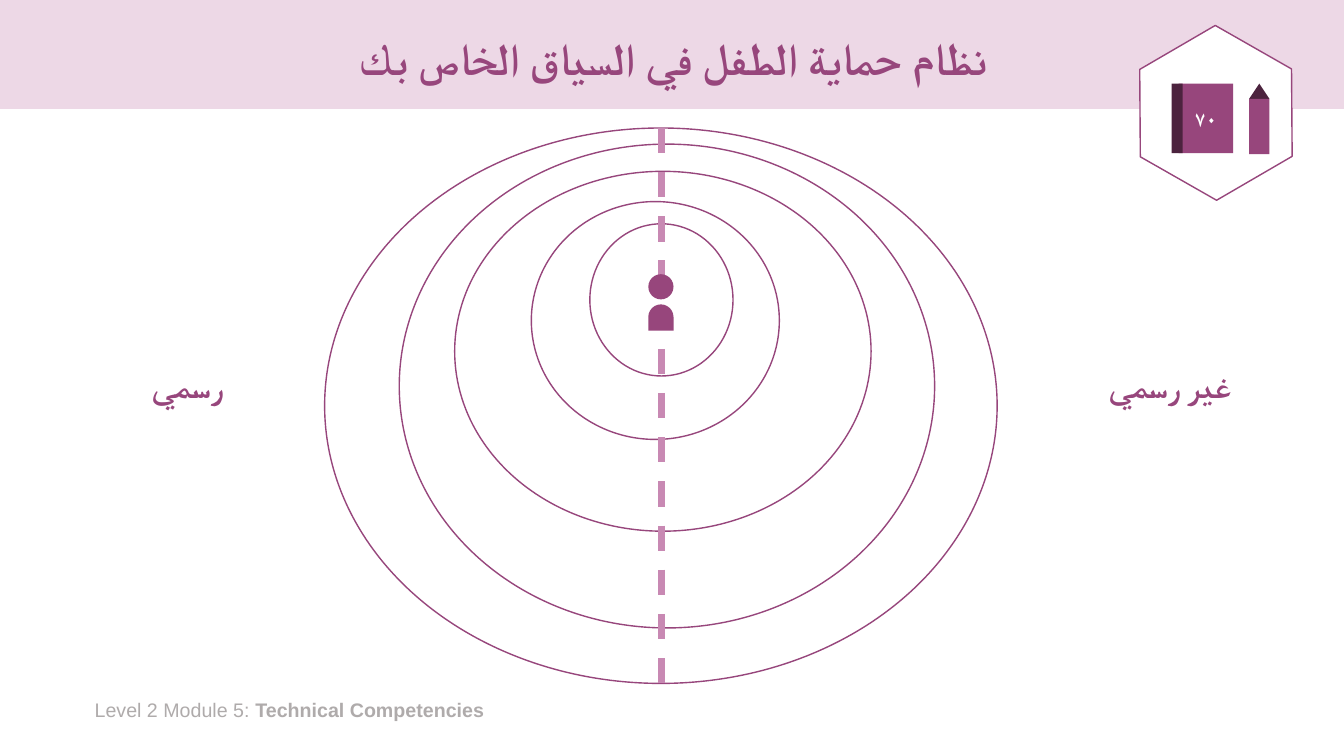
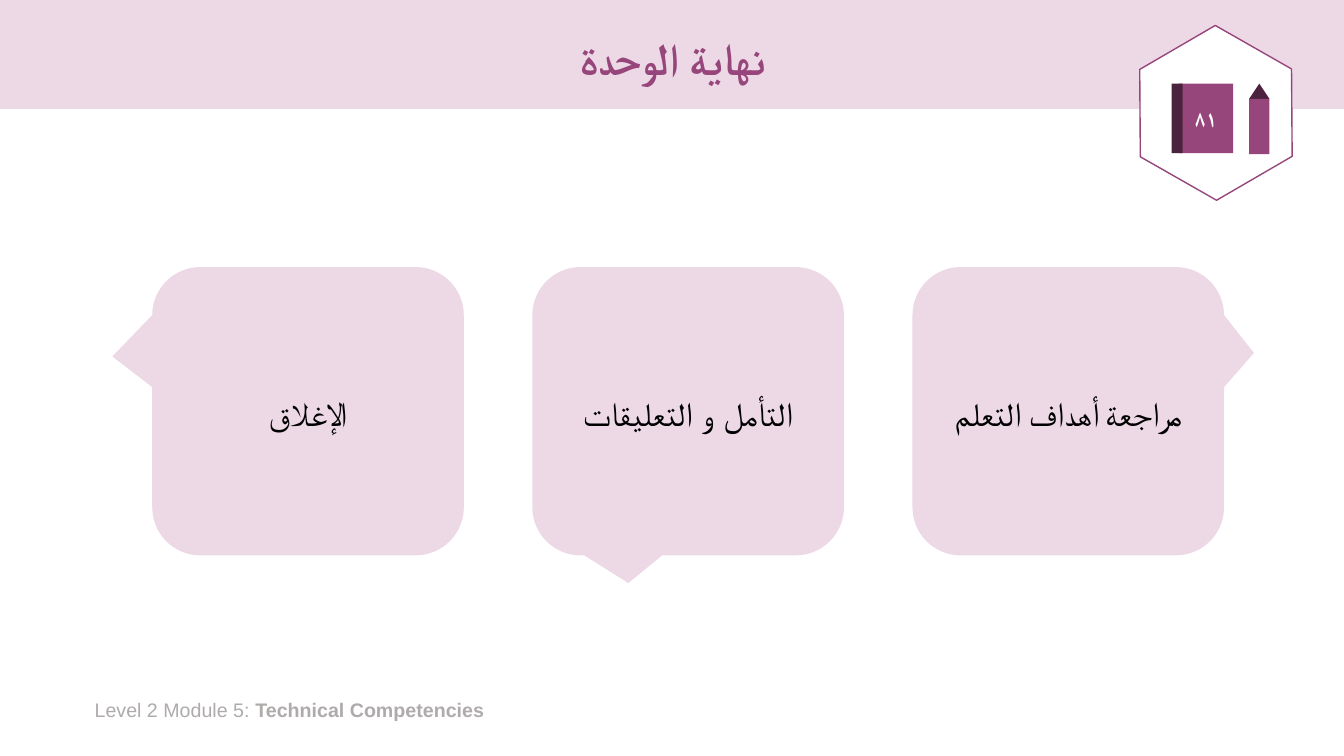
from lxml import etree
from pptx import Presentation
from pptx.dml.color import RGBColor
from pptx.enum.dml import MSO_LINE
from pptx.enum.shapes import MSO_CONNECTOR, MSO_SHAPE as SHAPE
from pptx.enum.text import MSO_ANCHOR, MSO_AUTO_SIZE, PP_ALIGN
from pptx.oxml.ns import qn
from pptx.util import Inches, Pt

COLORS = {
    "plum": "97467C",
    "dark": "4C233E",
    "pale": "EDD8E6",
    "dash": "C889B3",
    "gray": "AFABAB",
    "white": "FFFFFF",
    "black": "000000",
}
TITLE_BOX = (0.92, 0.13, 11.5, 0.95)
TITLE_ONLY = 5


def color(name):
    return RGBColor.from_string(COLORS[name])


def inches(*values):
    return [Inches(value) for value in values]


# Text
def add_run(paragraph, text, size, color_name, bold=False, font="Arial", script_font=None):
    run = paragraph.add_run()
    run.text = text
    run.font.size = Pt(size)
    run.font.bold = bold
    run.font.color.rgb = color(color_name)
    run.font.name = font
    # Arabic letters take the complex-script font
    properties = run.font._element
    etree.SubElement(properties, qn("a:cs")).set("typeface", script_font or font)


def write_arabic(shape, text, size, color_name, **style):
    shape.text_frame.vertical_anchor = MSO_ANCHOR.MIDDLE
    paragraph = shape.text_frame.paragraphs[0]
    paragraph.alignment = PP_ALIGN.CENTER
    paragraph._p.get_or_add_pPr().set("rtl", "1")
    add_run(paragraph, text, size, color_name, **style)
    return paragraph


def add_text_box(slide, box):
    text_box = slide.shapes.add_textbox(*inches(*box))
    text_box.text_frame.word_wrap = True
    return text_box


# Shapes
def add_shape(shapes, kind, box, fill=None, line=None, adjustments=()):
    shape = shapes.add_shape(kind, *inches(*box))
    shape.shadow.inherit = False
    for index, value in enumerate(adjustments):
        shape.adjustments[index] = value
    if fill:
        shape.fill.solid()
        shape.fill.fore_color.rgb = color(fill)
    else:
        shape.fill.background()
    if line:
        shape.line.color.rgb = color(line)
        shape.line.width = Pt(1)
    else:
        shape.line.fill.background()
    return shape


def add_dashed_line(slide, x, top, bottom):
    line = slide.shapes.add_connector(MSO_CONNECTOR.STRAIGHT, *inches(x, top, x, bottom))
    line.line.color.rgb = color("dash")
    line.line.width = Pt(4.5)
    line.line.dash_style = MSO_LINE.DASH
    etree.SubElement(line._element.spPr, qn("a:effectLst"))


# Parts shared by the slides
def build_layout(layout, slide):
    """Draw the band and footer once and move them into the layout."""
    band = add_shape(slide.shapes, SHAPE.RECTANGLE, (0, 0, 13.33, 1.08), "pale")
    footer = add_text_box(slide, (0.84, 6.87, 4.55, 0.34))
    paragraph = footer.text_frame.paragraphs[0]
    add_run(paragraph, "Level 2 Module 5: ", 14, "gray")
    add_run(paragraph, "Technical Competencies", 14, "gray", bold=True)
    for position, shape in enumerate((band, footer)):
        shape.element.xpath(".//p:cNvPr")[0].set("id", str(100 + position))
        layout.shapes.element.insert(2 + position, shape.element)

    title = layout.placeholders[0]
    title.left, title.top, title.width, title.height = inches(*TITLE_BOX)


def set_title(slide, text):
    title = slide.shapes.title
    title.left, title.top, title.width, title.height = inches(*TITLE_BOX)
    title.text_frame.auto_size = MSO_AUTO_SIZE.NONE
    paragraph = write_arabic(title, text, 32, "plum", bold=True, font="Calibri")
    paragraph.line_spacing = 0.9


def add_page_badge(slide, number):
    shapes = slide.shapes.add_group_shape().shapes
    hexagon = add_shape(shapes, SHAPE.HEXAGON, (11.19, 0.37, 1.74, 1.5),
                        "white", "plum", (0.29, 1.155))
    hexagon.rotation = 29.7
    book = add_shape(shapes, SHAPE.RECTANGLE, (11.69, 0.83, 0.54, 0.69), "plum")
    book.text_frame.word_wrap = False
    write_arabic(book, number, 16, "white", bold=True)
    add_shape(shapes, SHAPE.RECTANGLE, (11.62, 0.83, 0.11, 0.69), "dark")
    add_shape(shapes, SHAPE.ISOSCELES_TRIANGLE, (12.39, 0.83, 0.2, 0.15), "dark")
    add_shape(shapes, SHAPE.RECTANGLE, (12.39, 0.98, 0.2, 0.55), "plum")


# Slide contents
def add_person(slide):
    shapes = slide.shapes.add_group_shape().shapes
    add_shape(shapes, SHAPE.ROUND_2_SAME_RECTANGLE, (6.43, 3.02, 0.25, 0.26),
              "plum", adjustments=(0.5, 0))
    add_shape(shapes, SHAPE.OVAL, (6.43, 2.72, 0.25, 0.25), "plum")


def fill_system_slide(slide):
    set_title(slide, "نظام حماية الطفل في السياق الخاص بك")
    rings = (
        (3.22, 1.27, 6.67, 5.51),
        (3.96, 1.43, 5.31, 4.8),
        (4.51, 1.7, 4.13, 3.57),
        (5.27, 2, 2.46, 2.36),
        (5.85, 2.22, 1.42, 1.51),
    )
    for ring in rings:
        add_shape(slide.shapes, SHAPE.OVAL, ring, line="plum")
    add_dashed_line(slide, 6.56, 1.27, 6.78)

    sides = (
        ("رسمي", 0.66, 2.39, "Arial"),
        ("غير رسمي", 10.53, 2.15, "Calibri"),
    )
    for text, left, width, script_font in sides:
        label = add_text_box(slide, (left, 3.57, width, 0.5))
        write_arabic(label, text, 24, "plum", bold=True, script_font=script_font)
    add_page_badge(slide, "٧٠")
    add_person(slide)


def fill_closing_slide(slide):
    set_title(slide, "نهاية الوحدة")
    # Text, pointer tip and script font, from left to right
    callouts = (
        ("الإغلاق", (-0.628, -0.19), "Arial"),
        ("التأمل و التعليقات", (-0.192, 0.596), "Arial"),
        ("مراجعة أهداف التعلم", (0.596, -0.202), "Calibri"),
    )
    for index, (text, tip, script_font) in enumerate(callouts):
        box = (1.51 + 3.77 * index, 2.65, 3.09, 2.86)
        callout = add_shape(slide.shapes, SHAPE.ROUNDED_RECTANGULAR_CALLOUT, box,
                            "pale", adjustments=(*tip, 0.167))
        paragraph = write_arabic(callout, text, 24, "black", script_font=script_font)
        paragraph.line_spacing = 1.07
        paragraph.space_after = Pt(8)
    add_page_badge(slide, "٨١")


def main():
    presentation = Presentation()
    presentation.slide_width, presentation.slide_height = inches(13.33, 7.5)
    layout = presentation.slide_layouts[TITLE_ONLY]
    system_slide = presentation.slides.add_slide(layout)
    build_layout(layout, system_slide)
    fill_system_slide(system_slide)
    fill_closing_slide(presentation.slides.add_slide(layout))
    presentation.save("out.pptx")


if __name__ == "__main__":
    main()
